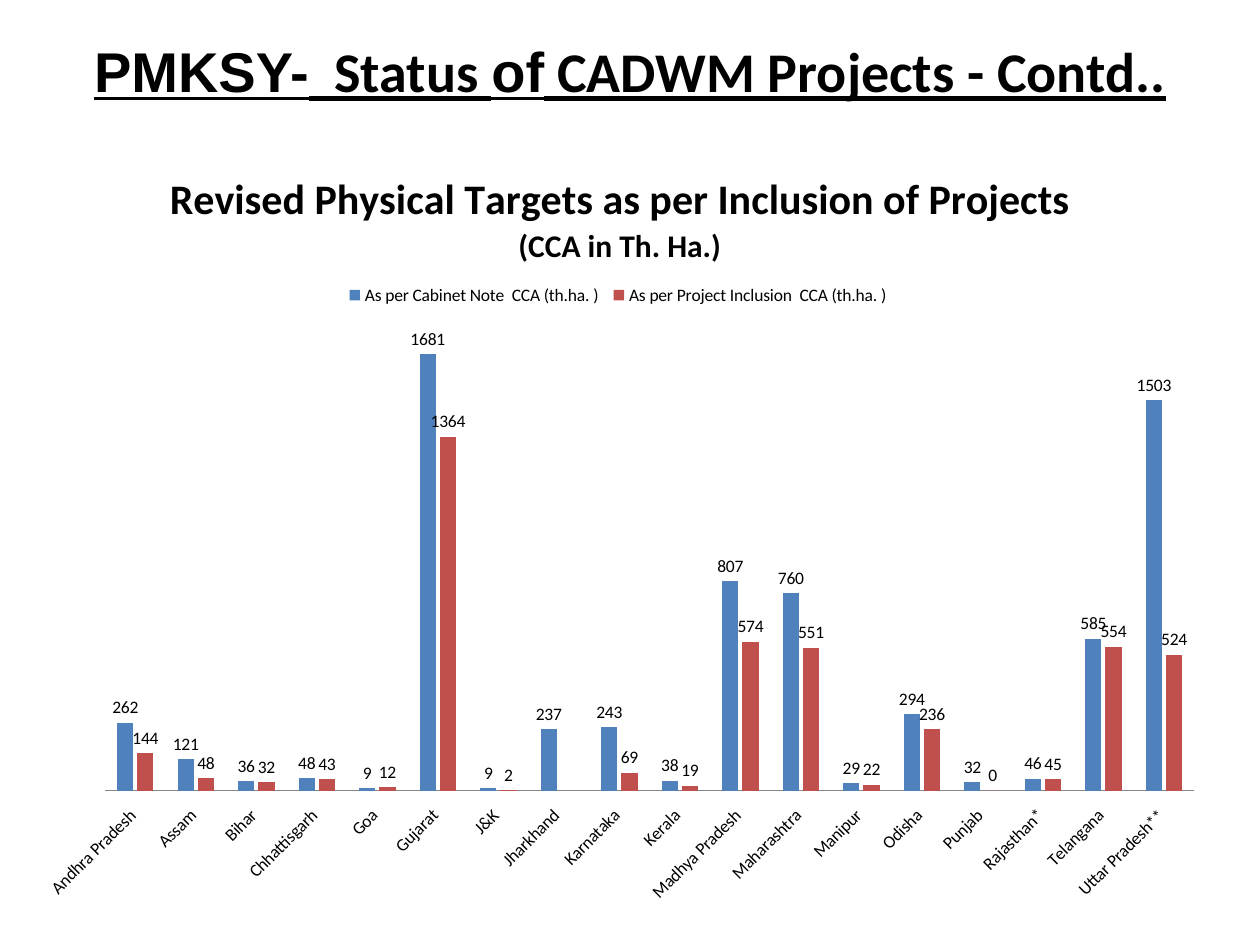
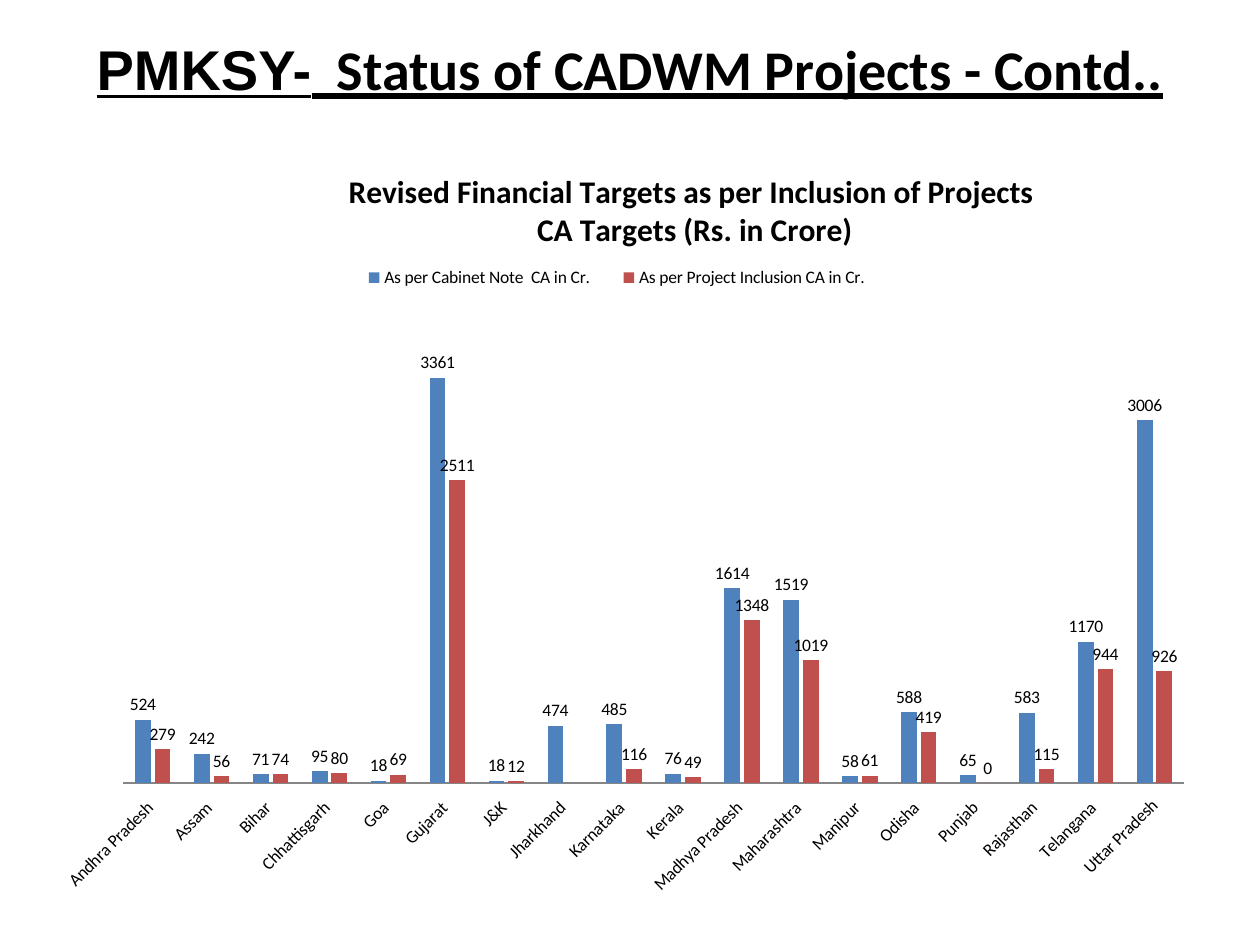
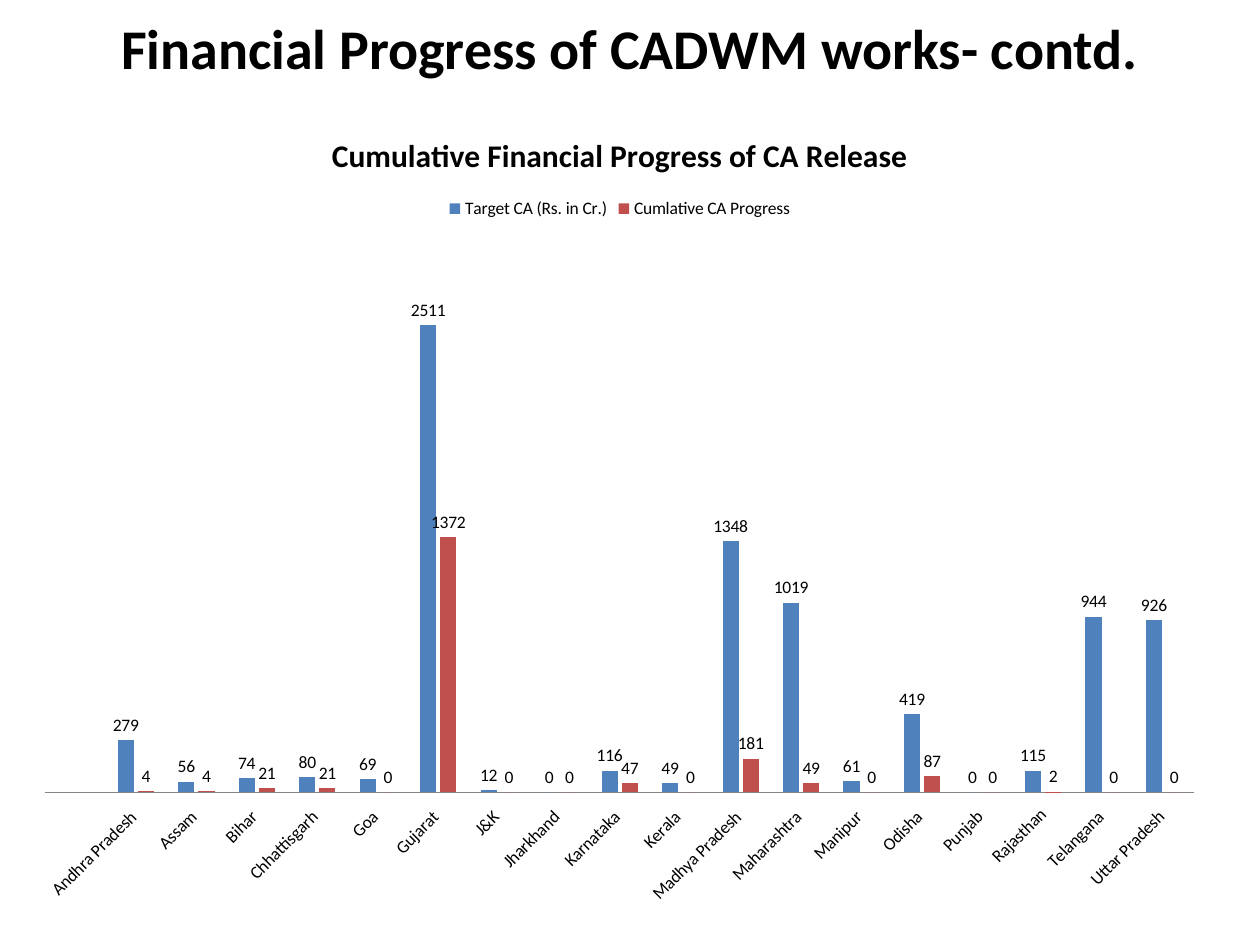
from lxml import etree
from pptx import Presentation
from pptx.chart.data import CategoryChartData
from pptx.dml.color import RGBColor
from pptx.enum.chart import (XL_CHART_TYPE, XL_LABEL_POSITION, XL_LEGEND_POSITION,
                             XL_TICK_LABEL_POSITION, XL_TICK_MARK)
from pptx.enum.text import MSO_ANCHOR, PP_ALIGN
from pptx.oxml.ns import qn
from pptx.util import Cm, Pt

CLUSTERED = XL_CHART_TYPE.COLUMN_CLUSTERED
OUTSIDE = XL_LABEL_POSITION.OUTSIDE_END
TOP = XL_LEGEND_POSITION.TOP
LOW = XL_TICK_LABEL_POSITION.LOW
NO_TICK = XL_TICK_MARK.NONE
MIDDLE = MSO_ANCHOR.MIDDLE
CENTER = PP_ALIGN.CENTER

COLORS = {"text": "000000", "first": "4F81BD", "second": "C0504D", "axis": "868686"}
HEAD, BODY = "Arial", "Calibri"

STATES = ["Andhra Pradesh ", "Assam ", "Bihar ", "Chhattisgarh ", "Goa ", "Gujarat ",
          "J&K ", "Jharkhand ", "Karnataka ", "Kerala ", "Madhya Pradesh ",
          "Maharashtra ", "Manipur ", "Odisha ", "Punjab "]

# Boxes are left, top, width, height in cm; layouts are fractions of the chart.
SLIDES = [
    {
        "title": [("PMKSY-", HEAD), ("  Status ", BODY), ("of", HEAD),
                  (" CADWM Projects - Contd..", BODY)],
        "underline": True,
        "title_box": (1.27, 0.43, 22.86, 1.98),
        "chart_box": (0.43, 2.97, 24.13, 15.44),
        "chart_title": [("Revised Physical Targets as per Inclusion of Projects", 24),
                        ("(CCA in Th. Ha.)", 18)],
        "states": STATES + ["Rajasthan* ", "Telangana ", "Uttar Pradesh** "],
        "series": [
            ("As per Cabinet Note  CCA (th.ha. ) ",
             [262, 121, 36, 48, 9, 1681, 9, 237, 243, 38, 807, 760, 29, 294, 32, 46,
              585, 1503]),
            ("As per Project Inclusion  CCA (th.ha. ) ",
             [144, 48, 32, 43, 12, 1364, 2, None, 69, 19, 574, 551, 22, 236, 0, 45,
              554, 524]),
        ],
        "axis_max": 1800,
        "layouts": {"plot": (0.07, 0.23, 0.91, 0.61)},
    },
    {
        "title": [("PMKSY-", HEAD), ("  Status of CADWM Projects - Contd..", BODY)],
        "underline": True,
        "title_box": (1.27, 0, 22.86, 2.74),
        "chart_box": (0.84, 2.74, 23.5, 15.44),
        "chart_title": [("Revised Financial Targets as per Inclusion of Projects ", 18),
                        ("CA Targets (Rs. in Crore)", 18)],
        "states": STATES + ["Rajasthan ", "Telangana ", "Uttar Pradesh"],
        "series": [
            ("As per Cabinet Note  CA in Cr. ",
             [524, 242, 71, 95, 18, 3361, 18, 474, 485, 76, 1614, 1519, 58, 588, 65,
              583, 1170, 3006]),
            ("As per Project Inclusion CA in Cr. ",
             [279, 56, 74, 80, 69, 2511, 12, None, 116, 49, 1348, 1019, 61, 419, 0,
              115, 944, 926]),
        ],
        "axis_max": 4000,
        "layouts": {"plot": (0.07, 0.215, 0.91, 0.63), "title": (0.26, 0.04),
                    "legend": (0.26, 0.16, 0.47, 0.05)},
    },
    {
        "title": [("Financial Progress of CADWM works- contd.", BODY)],
        "underline": False,
        "title_box": (1.27, 0, 22.86, 1.9),
        "chart_box": (0.43, 2.11, 24.13, 16.31),
        "chart_title": [("Cumulative Financial Progress of CA Release", 18)],
        "states": [""] + STATES + ["Rajasthan", "Telangana ", "Uttar Pradesh "],
        "series": [
            ("Target CA (Rs. in Cr.)",
             [None, 279, 56, 74, 80, 69, 2511, 12, 0, 116, 49, 1348, 1019, 61, 419, 0,
              115, 944, 926]),
            ("Cumlative CA Progress",
             [None, 4, 4, 21, 21, 0, 1372, 0, 0, 47, 0, 181, 49, 0, 87, 0, 2, 0, 0]),
        ],
        "axis_max": 3000,
        "layouts": {"plot": (0.02, 0.16, 0.96, 0.69)},
    },
]


def rgb(name):
    return RGBColor.from_string(COLORS[name])


def style_font(font, name, size, bold=False):
    font.name, font.size, font.bold = name, Pt(size), bold
    font.color.rgb = rgb("text")


def add_title(slide, runs, box, underline):
    tf = slide.shapes.add_textbox(*map(Cm, box)).text_frame
    tf.word_wrap = True
    tf.vertical_anchor = MIDDLE
    p = tf.paragraphs[0]
    p.alignment = CENTER
    for text, font in runs:
        r = p.add_run()
        r.text = text
        style_font(r.font, font, 32, bold=True)
        r.font.underline = underline


def set_layout(parent, index, box, inner=False):
    """Place a chart part by fractions: x, y and, if given, width and height."""
    for old in parent.findall(qn("c:layout")):
        parent.remove(old)
    layout = etree.Element(qn("c:layout"))
    manual = etree.SubElement(layout, qn("c:manualLayout"))
    settings = [("layoutTarget", "inner")] if inner else []
    settings += [("xMode", "edge"), ("yMode", "edge")]
    settings += zip("xywh", map(str, box))
    for tag, val in settings:
        etree.SubElement(manual, qn("c:" + tag)).set("val", val)
    parent.insert(index, layout)


def add_chart_title(chart, lines):
    tf = chart.chart_title.text_frame
    for i, (text, size) in enumerate(lines):
        p = tf.paragraphs[0] if i == 0 else tf.add_paragraph()
        r = p.add_run()
        r.text = text
        style_font(r.font, BODY, size, bold=True)


def style_axes(chart, axis_max):
    value = chart.value_axis
    value.minimum_scale, value.maximum_scale = 0, axis_max
    value.has_major_gridlines = False
    value.visible = False
    category = chart.category_axis
    category.major_tick_mark = category.minor_tick_mark = NO_TICK
    category.tick_label_position = LOW
    category.format.line.color.rgb = rgb("axis")
    style_font(category.tick_labels.font, BODY, 10)
    body = category._element.find(qn("c:txPr")).find(qn("a:bodyPr"))
    body.set("rot", "-2700000")
    body.set("vert", "horz")


def add_column_chart(slide, content):
    data = CategoryChartData(number_format="0")
    data.categories = content["states"]
    for name, values in content["series"]:
        data.add_series(name, values)
    box = map(Cm, content["chart_box"])
    chart = slide.shapes.add_chart(CLUSTERED, *box, data).chart
    style_font(chart.font, BODY, 10)
    add_chart_title(chart, content["chart_title"])

    chart.has_legend = True
    chart.legend.position = TOP
    chart.legend.include_in_layout = False
    style_axes(chart, content["axis_max"])

    plot = chart.plots[0]
    plot.gap_width, plot.overlap = 150, -25
    plot.vary_by_categories = False
    for series, color in zip(plot.series, ("first", "second")):
        series.invert_if_negative = False
        series.format.fill.solid()
        series.format.fill.fore_color.rgb = rgb(color)
        labels = series.data_labels
        labels.show_value = True
        labels.number_format, labels.number_format_is_linked = "0", False
        labels.position = OUTSIDE
        style_font(labels.font, BODY, 10)

    layouts = content["layouts"]
    plot_area = chart._chartSpace.find(qn("c:chart")).find(qn("c:plotArea"))
    set_layout(plot_area, 0, layouts["plot"], inner=True)
    if "title" in layouts:
        set_layout(chart.chart_title._element, 1, layouts["title"])
    if "legend" in layouts:
        set_layout(chart.legend._element, 1, layouts["legend"])


def main():
    prs = Presentation()
    prs.slide_width, prs.slide_height = Cm(25.4), Cm(19.05)
    for content in SLIDES:
        slide = prs.slides.add_slide(prs.slide_layouts[6])
        add_title(slide, content["title"], content["title_box"], content["underline"])
        add_column_chart(slide, content)
    prs.save("out.pptx")


if __name__ == "__main__":
    main()
